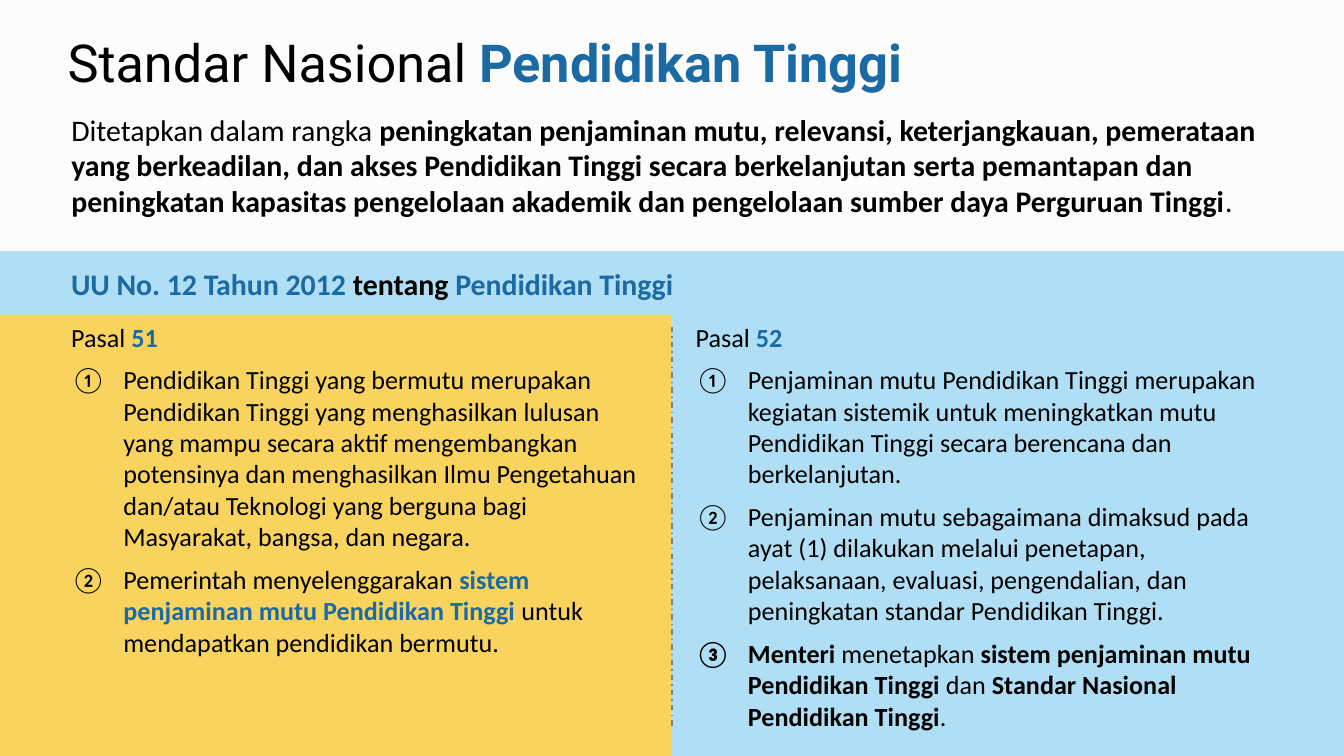
from dataclasses import dataclass
from typing import NamedTuple

from lxml.etree import SubElement
from pptx import Presentation
from pptx.dml.color import RGBColor
from pptx.enum.dml import MSO_LINE_DASH_STYLE as Dash
from pptx.enum.shapes import MSO_CONNECTOR, MSO_SHAPE
from pptx.enum.text import MSO_ANCHOR, MSO_AUTO_SIZE, PP_ALIGN
from pptx.oxml.ns import qn
from pptx.util import Pt

BLACK = RGBColor(0x00, 0x00, 0x00)
BLUE = RGBColor(0x1B, 0x6A, 0xA3)
PALE_BLUE = RGBColor(0xB0, 0xDE, 0xF4)
YELLOW = RGBColor(0xF8, 0xD3, 0x5E)
GRAY = RGBColor(0x80, 0x80, 0x80)
BACKGROUND = RGBColor(0xFC, 0xFC, 0xFC)

WIDTH, HEIGHT = 720, 405
MIDDLE = WIDTH / 2
BAND_TOP, ARTICLE_TOP = 134.5, 168.5
TEXT_LEFT = 31
NUMBER_INDENT = 28


class Span(NamedTuple):
    text: str
    bold: bool = False
    color: RGBColor = BLACK


class Box(NamedTuple):
    left: float
    top: float
    width: float
    height: float

    def lengths(self) -> tuple:
        return tuple(Pt(value) for value in self)


@dataclass
class Article:
    number: str
    box: Box
    clauses: list[list[Span]]


def write_spans(paragraph, spans: list[Span], size: float, font_name: str = "Calibri") -> None:
    for span in spans:
        run = paragraph.add_run()
        run.text = span.text
        run.font.name = font_name
        run.font.size = Pt(size)
        run.font.bold = span.bold
        run.font.color.rgb = span.color


def set_bullet(paragraph, indent: float, tag: str, **attributes: str) -> None:
    properties = paragraph._p.get_or_add_pPr()
    properties.set("marL", str(Pt(indent)))
    properties.set("indent", str(-Pt(indent)))
    SubElement(properties, qn(tag), attributes)


def place(shape, box: Box) -> None:
    shape.left, shape.top, shape.width, shape.height = box.lengths()
    shape.text_frame.word_wrap = True
    shape.text_frame.auto_size = MSO_AUTO_SIZE.NONE


def add_panel(slide, box: Box, color: RGBColor) -> None:
    panel = slide.shapes.add_shape(MSO_SHAPE.RECTANGLE, *box.lengths())
    panel.shadow.inherit = False
    panel.fill.solid()
    panel.fill.fore_color.rgb = color
    panel.line.fill.background()


def add_text_frame(slide, box: Box):
    shape = slide.shapes.add_textbox(*box.lengths())
    shape.text_frame.word_wrap = True
    return shape.text_frame


def add_article(slide, article: Article) -> None:
    text_frame = add_text_frame(slide, article.box)
    heading = text_frame.paragraphs[0]
    heading.space_after = Pt(6)
    write_spans(heading, [Span("Pasal "), Span(article.number, True, BLUE)], 14)
    for clause in article.clauses:
        paragraph = text_frame.add_paragraph()
        paragraph.space_after = Pt(6)
        set_bullet(paragraph, NUMBER_INDENT, "a:buAutoNum", type="circleNumDbPlain")
        write_spans(paragraph, clause, 14)


ARTICLES = [
    Article("51", Box(TEXT_LEFT, ARTICLE_TOP, 323.5, 187), [
        [Span("Pendidikan Tinggi yang bermutu merupakan Pendidikan Tinggi yang menghasilkan "
              "lulusan yang mampu secara aktif mengembangkan potensinya dan menghasilkan Ilmu "
              "Pengetahuan dan/atau Teknologi yang berguna bagi Masyarakat, bangsa, dan negara.")],
        [Span("Pemerintah menyelenggarakan "),
         Span("sistem penjaminan mutu Pendidikan Tinggi ", True, BLUE),
         Span("untuk mendapatkan pendidikan bermutu.")],
    ]),
    Article("52", Box(365.6, ARTICLE_TOP, 329, 187), [
        [Span("Penjaminan mutu Pendidikan Tinggi merupakan kegiatan sistemik untuk meningkatkan "
              "mutu Pendidikan Tinggi secara berencana dan berkelanjutan.")],
        [Span("Penjaminan mutu sebagaimana dimaksud pada ayat (1) dilakukan melalui penetapan, "
              "pelaksanaan, evaluasi, pengendalian, dan peningkatan standar Pendidikan Tinggi.")],
        [Span("Menteri", True), Span(" menetapkan "),
         Span("sistem penjaminan mutu Pendidikan Tinggi ", True), Span("dan"),
         Span(" Standar Nasional Pendidikan Tinggi", True), Span(".")],
    ]),
]


def main() -> None:
    presentation = Presentation()
    presentation.slide_width, presentation.slide_height = Pt(WIDTH), Pt(HEIGHT)
    slide = presentation.slides.add_slide(presentation.slide_layouts[1])
    slide.background.fill.solid()
    slide.background.fill.fore_color.rgb = BACKGROUND

    # Title
    title = slide.shapes.title
    place(title, Box(29, 16.5, 536, 33))
    title.text_frame.vertical_anchor = MSO_ANCHOR.MIDDLE
    heading = title.text_frame.paragraphs[0]
    heading.alignment = PP_ALIGN.LEFT
    write_spans(heading, [Span("Standar Nasional "), Span("Pendidikan Tinggi", True, BLUE)],
                28, "Roboto")

    # Introduction
    body = slide.placeholders[1]
    place(body, Box(TEXT_LEFT, 56, 663, 117))
    introduction = body.text_frame.paragraphs[0]
    set_bullet(introduction, 0, "a:buNone")
    write_spans(introduction, [
        Span("Ditetapkan dalam rangka "),
        Span("peningkatan penjaminan mutu, relevansi, keterjangkauan, pemerataan yang "
             "berkeadilan, dan akses Pendidikan Tinggi secara berkelanjutan serta pemantapan "
             "dan peningkatan kapasitas pengelolaan akademik dan pengelolaan sumber daya "
             "Perguruan Tinggi", True),
        Span("."),
    ], 16)

    # Coloured panels
    add_panel(slide, Box(0, BAND_TOP, WIDTH, HEIGHT - BAND_TOP), PALE_BLUE)
    add_panel(slide, Box(0, ARTICLE_TOP, MIDDLE, HEIGHT - ARTICLE_TOP), YELLOW)

    # Name of the law
    law = add_text_frame(slide, Box(TEXT_LEFT, 139, 648, 28)).paragraphs[0]
    law.space_after = Pt(6)
    write_spans(law, [Span("UU No. 12 Tahun 2012 ", True, BLUE), Span("tentang ", True),
                      Span("Pendidikan Tinggi", True, BLUE)], 16)

    # Articles and the line between them
    for article in ARTICLES:
        add_article(slide, article)
    divider = slide.shapes.add_connector(
        MSO_CONNECTOR.STRAIGHT, Pt(MIDDLE), Pt(175), Pt(MIDDLE), Pt(390))
    divider.line.color.rgb = GRAY
    divider.line.width = Pt(0.75)
    divider.line.dash_style = Dash.DASH_DOT
    SubElement(divider._element.spPr, qn("a:effectLst"))

    presentation.save("out.pptx")


if __name__ == "__main__":
    main()
